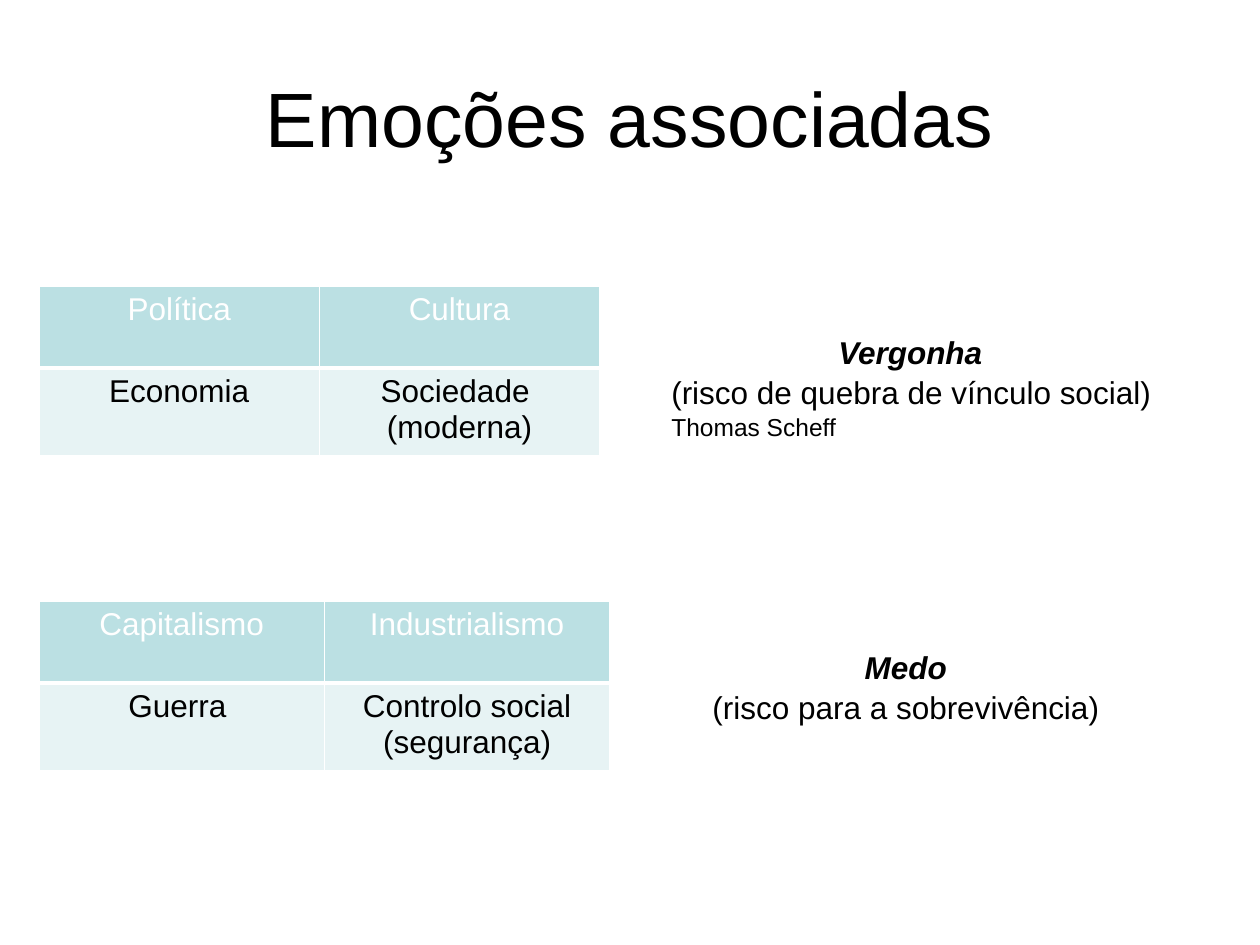
from pptx import Presentation
from pptx.dml.color import RGBColor
from pptx.enum.text import MSO_ANCHOR, PP_ALIGN
from pptx.oxml.ns import qn
from pptx.util import Inches, Pt
from lxml import etree

BLACK = RGBColor(0x00, 0x00, 0x00)
WHITE = RGBColor(0xFF, 0xFF, 0xFF)
HEADER_FILL = RGBColor(0xBB, 0xE0, 0xE3)
BODY_FILL = RGBColor(0xE7, 0xF3, 0xF4)
CENTER, LEFT = PP_ALIGN.CENTER, PP_ALIGN.LEFT
MIDDLE = MSO_ANCHOR.MIDDLE
FONT = "Arial"


def add_run(p, text, size, color=BLACK, emphasis=False, align=CENTER):
    p.alignment = align
    r = p.add_run()
    r.text = text
    r.font.name = FONT
    r.font.size = Pt(size)
    r.font.color.rgb = color
    r.font.bold = r.font.italic = emphasis


def next_paragraph(tf, index):
    return tf.paragraphs[0] if index == 0 else tf.add_paragraph()


def add_text_box(s, left, top, width, height):
    tf = s.shapes.add_textbox(Inches(left), Inches(top), Inches(width), Inches(height)).text_frame
    tf.word_wrap = True
    return tf


def add_title(s, left, top, width, height, text):
    tf = add_text_box(s, left, top, width, height)
    tf.vertical_anchor = MIDDLE
    add_run(tf.paragraphs[0], text, 44)


def set_borders(cell, bottom):
    """Draw white cell borders, 1 pt except for the given bottom width."""
    tc_pr = cell._tc.get_or_add_tcPr()
    widths = {"a:lnL": 1, "a:lnR": 1, "a:lnT": 1, "a:lnB": bottom}
    for i, (tag, width) in enumerate(widths.items()):
        ln = etree.Element(qn(tag), w=str(Pt(width)))
        fill = etree.SubElement(ln, qn("a:solidFill"))
        etree.SubElement(fill, qn("a:srgbClr"), val=str(WHITE))
        tc_pr.insert(i, ln)


def add_dimension_table(s, left, top, width, row_heights, rows):
    """Each cell is a list of paragraphs; the first row is the header."""
    table = s.shapes.add_table(len(rows), len(rows[0]), Inches(left), Inches(top),
                               Inches(width), Inches(sum(row_heights))).table
    for i, (height, row) in enumerate(zip(row_heights, rows)):
        table.rows[i].height = Inches(height)
        header = i == 0
        for j, lines in enumerate(row):
            cell = table.cell(i, j)
            cell.fill.solid()
            cell.fill.fore_color.rgb = HEADER_FILL if header else BODY_FILL
            set_borders(cell, 3 if header else 1)
            for k, line in enumerate(lines):
                add_run(next_paragraph(cell.text_frame, k), line, 18, WHITE if header else BLACK)


def add_emotion(s, left, top, width, height, name, details):
    """Add an emphasised name above details of (text, size, alignment)."""
    tf = add_text_box(s, left, top, width, height)
    add_run(tf.paragraphs[0], name, 18, emphasis=True)
    for text, size, align in details:
        add_run(tf.add_paragraph(), text, size, align=align)
    for p in tf.paragraphs:
        p.line_spacing = 1.05


def main():
    prs = Presentation()
    prs.slide_width, prs.slide_height = Inches(10), Inches(7.5)
    s = prs.slides.add_slide(prs.slide_layouts[6])

    add_title(s, 0.5, 0.3, 9, 1.25, "Emoções associadas")

    add_dimension_table(s, 0.31, 2.27, 4.45, (0.65, 0.65), [
        [["Política"], ["Cultura"]],
        [["Economia"], ["Sociedade ", "(moderna)"]],
    ])
    add_emotion(s, 5.23, 2.58, 4.06, 0.94, "Vergonha ", [
        ("(risco de quebra de vínculo social)", 18, LEFT),
        ("Thomas Scheff", 14, LEFT),
    ])

    add_dimension_table(s, 0.31, 4.77, 4.53, (0.65, 0.7), [
        [["Capitalismo"], ["Industrialismo"]],
        [["Guerra "], ["Controlo social (segurança)"]],
    ])
    add_emotion(s, 5.16, 5.08, 4.06, 0.71, "Medo", [
        ("(risco para a sobrevivência)", 18, CENTER),
    ])

    prs.save("out.pptx")


if __name__ == "__main__":
    main()
